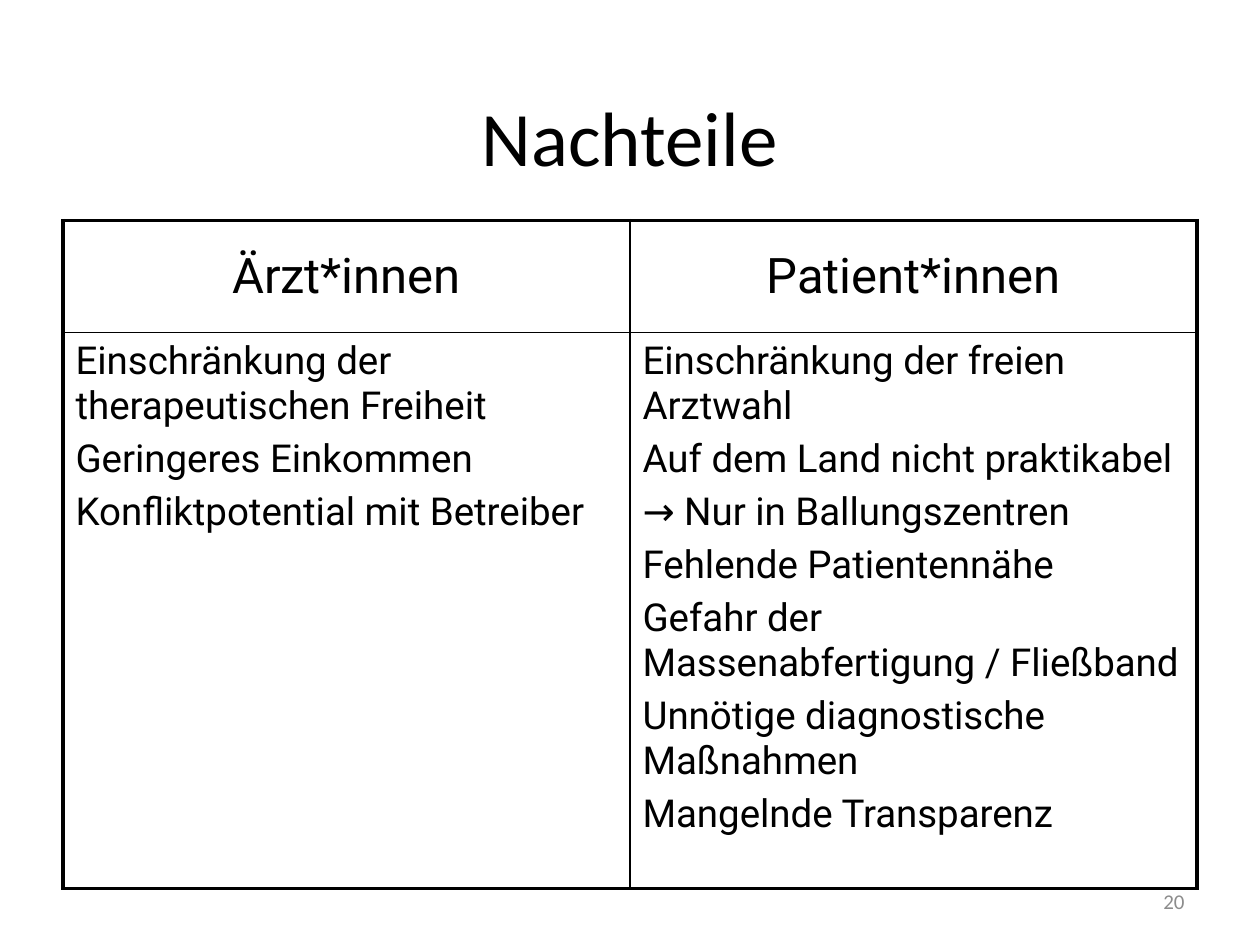
from dataclasses import dataclass

from pptx import Presentation
from pptx.dml.color import RGBColor
from pptx.enum.text import MSO_ANCHOR, PP_ALIGN
from pptx.oxml.ns import qn
from pptx.table import Table, _Cell
from pptx.text.text import TextFrame
from pptx.util import Inches, Pt
from lxml.etree import SubElement

BLACK = "000000"
GREY = "8C8C8C"
OUTER, INNER = 2.25, 1


@dataclass
class Style:
    size: float
    font: str = "Roboto"
    color: str = BLACK
    align: PP_ALIGN = PP_ALIGN.LEFT
    space: float = 0  # share of the text size


@dataclass
class Column:
    heading: str
    points: list[str]


TITLE = Style(44, "Calibri", align=PP_ALIGN.CENTER)
HEADING = Style(28, align=PP_ALIGN.CENTER, space=0.2)
POINT = Style(22, space=0.2)
NUMBER = Style(12, "Calibri", GREY, PP_ALIGN.RIGHT)

COLUMNS = [
    Column("Ärzt*innen", [
        "Einschränkung der therapeutischen Freiheit",
        "Geringeres Einkommen",
        "Konfliktpotential mit Betreiber",
    ]),
    Column("Patient*innen", [
        "Einschränkung der freien Arztwahl",
        "Auf dem Land nicht praktikabel",
        "→ Nur in Ballungszentren",
        "Fehlende Patientennähe",
        "Gefahr der Massenabfertigung / Fließband",
        "Unnötige diagnostische Maßnahmen",
        "Mangelnde Transparenz",
    ]),
]


def rgb(color: str) -> RGBColor:
    return RGBColor.from_string(color)


def write(tf: TextFrame, lines: list[str], style: Style) -> None:
    tf.word_wrap = True
    for i, line in enumerate(lines):
        p = tf.paragraphs[0] if i == 0 else tf.add_paragraph()
        p.alignment = style.align
        p.space_before = Pt(style.size * style.space)
        r = p.add_run()
        r.text = line
        r.font.size = Pt(style.size)
        r.font.name = style.font
        r.font.color.rgb = rgb(style.color)


def set_border(cell: _Cell, side: str, width: float) -> None:
    tc_pr = cell._tc.get_or_add_tcPr()
    ln = SubElement(tc_pr, qn(f"a:ln{side}"), w=str(Pt(width)))
    fill = SubElement(ln, qn("a:solidFill"))
    SubElement(fill, qn("a:srgbClr"), val=BLACK)


def format_grid(table: Table) -> None:
    """Heavy frame, thin inner lines, no fills."""
    last_row, last_col = len(table.rows) - 1, len(table.columns) - 1
    for row in range(last_row + 1):
        for col in range(last_col + 1):
            cell = table.cell(row, col)
            on_frame = {"L": col == 0, "R": col == last_col,
                        "T": row == 0, "B": row == last_row}
            for side, outer in on_frame.items():
                set_border(cell, side, OUTER if outer else INNER)
            cell.fill.background()


def main() -> None:
    prs = Presentation()
    prs.slide_width, prs.slide_height = Inches(10), Inches(7.5)
    s = prs.slides.add_slide(prs.slide_layouts[5])

    title = s.shapes.title
    title.left, title.top = Inches(0.5), Inches(0.32)
    title.width, title.height = Inches(9), Inches(1.51)
    title.text_frame.vertical_anchor = MSO_ANCHOR.MIDDLE
    write(title.text_frame, ["Nachteile"], TITLE)

    table = s.shapes.add_table(2, len(COLUMNS), Inches(0.5), Inches(1.75),
                               Inches(9), Inches(5.3)).table
    table.first_row = table.horz_banding = False
    table.rows[0].height, table.rows[1].height = Inches(0.89), Inches(4.41)
    format_grid(table)
    for i, column in enumerate(COLUMNS):
        head, body = table.cell(0, i), table.cell(1, i)
        head.vertical_anchor = MSO_ANCHOR.MIDDLE
        write(head.text_frame, [column.heading], HEADING)
        write(body.text_frame, column.points, POINT)

    number = s.shapes.add_textbox(Inches(7.17), Inches(6.95), Inches(2.33), Inches(0.4))
    number.text_frame.vertical_anchor = MSO_ANCHOR.MIDDLE
    write(number.text_frame, ["20"], NUMBER)

    prs.save("out.pptx")


if __name__ == "__main__":
    main()
